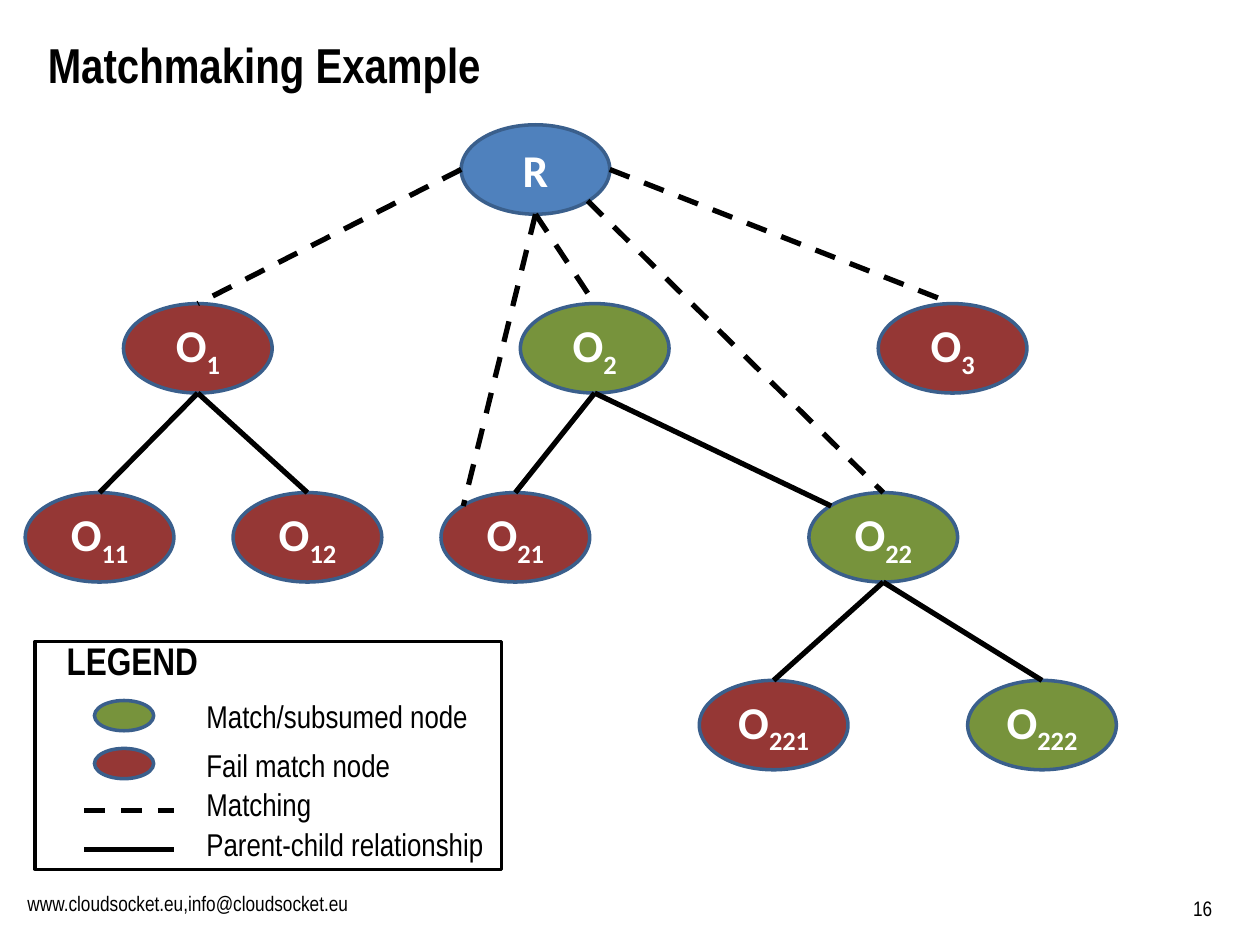
from dataclasses import dataclass
from typing import NamedTuple

from pptx import Presentation
from pptx import util as u
from pptx.dml.color import RGBColor
from pptx.enum import dml, shapes, text
from pptx.oxml.ns import qn
from lxml import etree


@dataclass(frozen=True)
class Theme:
    ink: str = "000000"
    white: str = "FFFFFF"
    request: str = "4F81BD"
    match: str = "77933C"
    fail: str = "953735"
    outline: str = "3A5F8C"
    font: str = "Arial Narrow"
    node_font: str = "Calibri"
    title_pt: int = 28
    node_pt: int = 26
    heading_pt: int = 22
    legend_pt: int = 18
    footer_pt: int = 12
    outline_pt: int = 2
    edge_pt: int = 3


class Node(NamedTuple):
    letter: str
    index: str
    left: float
    top: float
    fill: str


class Edge(NamedTuple):
    start: str
    start_site: str
    end: str
    end_site: str
    dashed: bool


class LegendRow(NamedTuple):
    label: str
    top: float
    width: float
    mark_y: float
    fill: str | None = None
    dashed: bool = False


T = Theme()
NODE_W, NODE_H = 1.18, 0.71
LEVELS = (0.99, 2.41, 3.91, 5.4)

# Points on an ellipse as fractions of its width and height
SITES = {
    "top": (0.5, 0), "left": (0, 0.5), "bottom": (0.5, 1), "right": (1, 0.5),
    "top left": (0.15, 0.15), "bottom right": (0.85, 0.85),
}

NODES = [
    Node("R", "", 3.66, LEVELS[0], T.request),
    Node("O", "1", 0.98, LEVELS[1], T.fail),
    Node("O", "2", 4.13, LEVELS[1], T.match),
    Node("O", "3", 6.97, LEVELS[1], T.fail),
    Node("O", "11", 0.2, LEVELS[2], T.fail),
    Node("O", "12", 1.85, LEVELS[2], T.fail),
    Node("O", "21", 3.5, LEVELS[2], T.fail),
    Node("O", "22", 6.42, LEVELS[2], T.match),
    Node("O", "221", 5.55, LEVELS[3], T.fail),
    Node("O", "222", 7.68, LEVELS[3], T.match),
]

EDGES = [
    Edge("O1", "bottom", "O11", "top", False),
    Edge("O1", "bottom", "O12", "top", False),
    Edge("O2", "bottom", "O21", "top", False),
    Edge("O2", "bottom", "O22", "top left", False),
    Edge("O22", "bottom", "O221", "top", False),
    Edge("O22", "bottom", "O222", "top", False),
    Edge("R", "left", "O1", "top", True),
    Edge("R", "bottom", "O2", "top", True),
    Edge("R", "right", "O3", "top", True),
    Edge("R", "bottom", "O21", "top left", True),
    Edge("R", "bottom right", "O22", "top", True),
]

LEGEND = [
    LegendRow("Match/subsumed node", 5.48, 2.28, 5.68, fill=T.match),
    LegendRow("Fail match node", 5.87, 2.05, 6.06, fill=T.fail),
    LegendRow("Matching", 6.18, 2.05, 6.43, dashed=True),
    LegendRow("Parent-child relationship", 6.5, 2.44, 6.74),
]


def rgb(value: str) -> RGBColor:
    return RGBColor.from_string(value)


def style(r, size: int, font: str = T.font, color: str = T.ink, bold: bool = False) -> None:
    r.font.size = u.Pt(size)
    r.font.name = font
    r.font.bold = bold
    r.font.color.rgb = rgb(color)


def add_label(s, label: str, box: tuple, size: int, bold: bool = False,
              anchor=text.MSO_ANCHOR.TOP, align=text.PP_ALIGN.LEFT) -> None:
    tf = s.shapes.add_textbox(*map(u.Inches, box)).text_frame
    tf.word_wrap = True
    tf.vertical_anchor = anchor
    tf.text = label
    p = tf.paragraphs[0]
    p.alignment = align
    style(p.runs[0], size, bold=bold)


def add_outlined(s, kind, box: tuple, fill: str | None, line: str):
    sp = s.shapes.add_shape(kind, *map(u.Inches, box))
    sp.shadow.inherit = False
    if fill:
        sp.fill.solid()
        sp.fill.fore_color.rgb = rgb(fill)
    else:
        sp.fill.background()
    sp.line.color.rgb = rgb(line)
    sp.line.width = u.Pt(T.outline_pt)
    return sp


def add_node(s, node: Node):
    sp = add_outlined(s, shapes.MSO_SHAPE.OVAL, (node.left, node.top, NODE_W, NODE_H),
                      node.fill, T.outline)
    tf = sp.text_frame
    tf.word_wrap = False
    tf.vertical_anchor = text.MSO_ANCHOR.MIDDLE
    tf.text = node.letter
    p = tf.paragraphs[0]
    p.alignment = text.PP_ALIGN.CENTER
    if node.index:
        r = p.add_run()
        r.text = node.index
        r._r.get_or_add_rPr().set("baseline", "-25000")
    for r in p.runs:
        style(r, T.node_pt, T.node_font, T.white, True)
    return sp


def add_line(s, start: tuple, end: tuple, dashed: bool):
    cx = s.shapes.add_connector(shapes.MSO_CONNECTOR.STRAIGHT, *map(u.Inches, start + end))
    cx.line.color.rgb = rgb(T.ink)
    cx.line.width = u.Pt(T.edge_pt)
    if dashed:
        cx.line.dash_style = dml.MSO_LINE.DASH
    etree.SubElement(cx._element.spPr, qn("a:effectLst"))
    return cx


def site_point(node: Node, site: str) -> tuple:
    fx, fy = SITES[site]
    return node.left + fx * NODE_W, node.top + fy * NODE_H


def add_tree(s) -> None:
    nodes = {n.letter + n.index: n for n in NODES}
    ovals = {name: add_node(s, n) for name, n in nodes.items()}
    for e in EDGES:
        cx = add_line(s, site_point(nodes[e.start], e.start_site),
                      site_point(nodes[e.end], e.end_site), e.dashed)
        if e.end_site == "top":
            cx.end_connect(ovals[e.end], 0)


def add_legend(s) -> None:
    add_label(s, "LEGEND", (0.43, 5.01, 3.39, 0.47), T.heading_pt, bold=True)
    for row in LEGEND:
        if row.fill:
            add_outlined(s, shapes.MSO_SHAPE.OVAL, (0.75, row.mark_y - 0.12, 0.47, 0.24),
                         row.fill, T.outline)
        else:
            add_line(s, (0.67, row.mark_y), (1.38, row.mark_y), row.dashed)
        add_label(s, row.label, (1.54, row.top, row.width, 0.4), T.legend_pt)
    add_outlined(s, shapes.MSO_SHAPE.RECTANGLE, (0.28, 5.09, 3.7, 1.81), None, T.ink)


def main() -> None:
    prs = Presentation()
    prs.slide_width, prs.slide_height = u.Inches(10), u.Inches(7.5)
    s = prs.slides.add_slide(prs.slide_layouts[5])

    # Title
    title = s.shapes.title
    title.left, title.top, title.width, title.height = map(u.Inches, (0.28, 0.22, 9.45, 1.01))
    tf = title.text_frame
    tf.text = "Matchmaking Example"
    tf.vertical_anchor = text.MSO_ANCHOR.TOP
    tf.paragraphs[0].alignment = text.PP_ALIGN.LEFT
    style(tf.paragraphs[0].runs[0], T.title_pt, bold=True)

    # Footer and page number
    add_label(s, "www.cloudsocket.eu,info@cloudsocket.eu", (0.12, 6.82, 2.84, 0.5),
              T.footer_pt, anchor=text.MSO_ANCHOR.BOTTOM)
    add_label(s, "16", (6.89, 6.8, 2.83, 0.56), T.footer_pt,
              anchor=text.MSO_ANCHOR.BOTTOM, align=text.PP_ALIGN.RIGHT)

    # Diagram
    add_tree(s)
    add_legend(s)
    prs.save("out.pptx")


if __name__ == "__main__":
    main()
